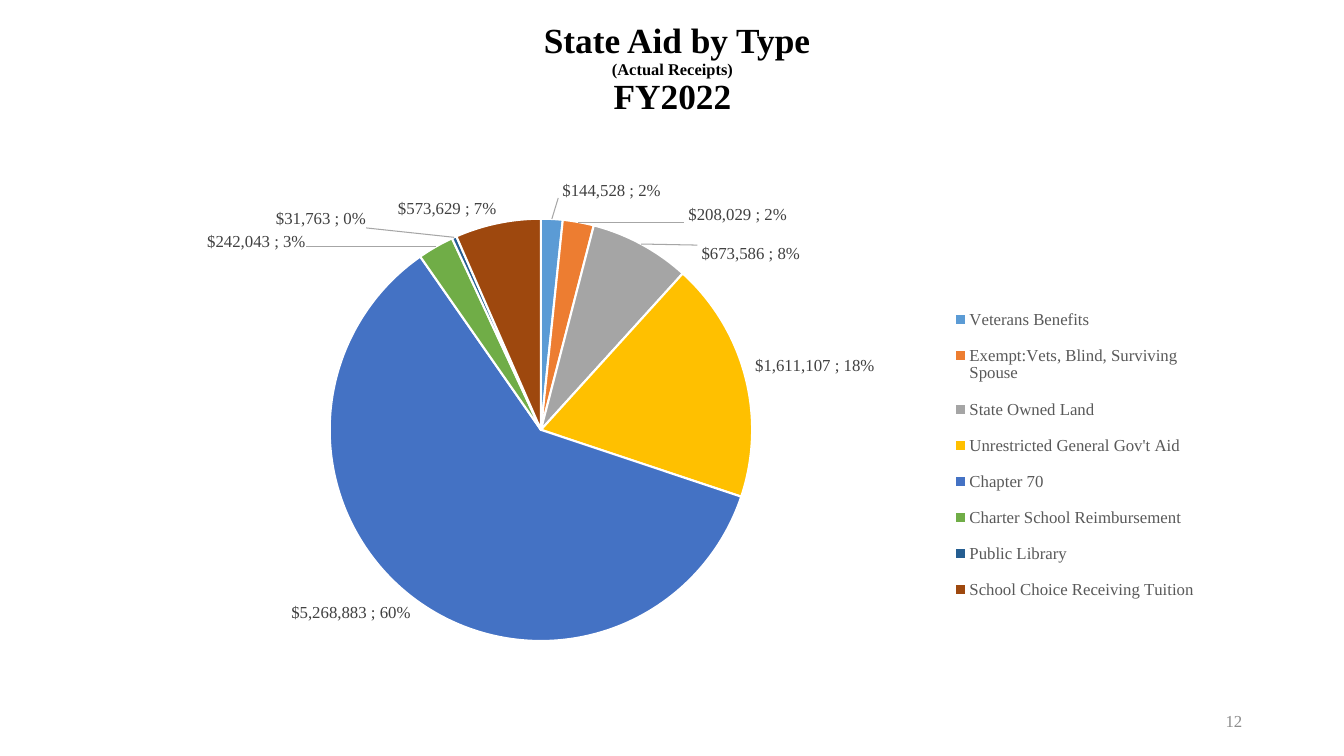
from copy import deepcopy

from lxml import etree
from pptx import Presentation
from pptx.chart.data import CategoryChartData
from pptx.dml.color import RGBColor
from pptx.enum.chart import XL_CHART_TYPE, XL_LABEL_POSITION, XL_LEGEND_POSITION
from pptx.enum.text import MSO_ANCHOR, PP_ALIGN
from pptx.oxml import parse_xml
from pptx.oxml.ns import nsdecls, qn
from pptx.util import Inches, Pt

PIE = XL_CHART_TYPE.PIE
LEGEND_RIGHT = XL_LEGEND_POSITION.RIGHT
OUTSIDE_END = XL_LABEL_POSITION.OUTSIDE_END
CENTER, RIGHT = PP_ALIGN.CENTER, PP_ALIGN.RIGHT
TOP, MIDDLE = MSO_ANCHOR.TOP, MSO_ANCHOR.MIDDLE

# Content
TITLE_LINES = [(" State Aid by Type", "title"), ("(Actual Receipts)", "subtitle"), ("FY2022", "title")]
PAGE_NUMBER = "12"
# Aid type, receipts, slice colour, label shift in inches (or None)
STATE_AID = [
    ("Veterans Benefits", 144528, "5B9BD5", (0.57, -0.15)),
    ("Exempt:Vets, Blind, Surviving Spouse", 208029, "ED7D31", (1.04, 0.07)),
    ("State Owned Land", 673586, "A5A5A5", (0.53, 0.24)),
    ("Unrestricted General Gov't Aid", 1611107, "FFC000", None),
    ("Chapter 70", 5268883, "4472C4", None),
    ("Charter School Reimbursement", 242043, "70AD47", (-1.26, 0.09)),
    ("Public Library", 31763, "255E91", (-0.85, -0.04)),
    ("School Choice Receiving Tuition", 573629, "9E480E", None),
]
DOLLARS = '_("$"* #,##0_);_("$"* \\(#,##0\\);_("$"* "-"??_);_(@_)'

# Theme and geometry
THEME = {
    "font": "Times New Roman",
    "colors": {"title": "000000", "label": "404040", "legend": "595959",
               "page": "8C8C8C", "edge": "FFFFFF", "leader": "A6A6A6"},
    "sizes": {"title": 25.2, "subtitle": 11.7, "body": 12},
}
COLORS, SIZES = THEME["colors"], THEME["sizes"]
TITLE_BOX = (0.74, 0.2, 11.86, 1.18)
TITLE_INSET = 0.03
CHART_BOX = (1.34, 1.8, 10.66, 4.73)
PAGE_BOX = (9.42, 6.95, 3, 0.4)
# Areas inside the chart, in inches from its corner
PIE_AREA = (1.93, 0.37, 4.19, 4.19)
LEGEND_AREA = (8.07, 1.1, 2.5, 3.22)


def format_font(font, size, color, bold=False):
    font.name = THEME["font"]
    font.size = Pt(size)
    font.bold = bold
    font.color.rgb = RGBColor.from_string(color)


def write_text(shape, lines, color, align, anchor, bold=False, spacing=1.0):
    """Fill one paragraph with (text, size name) lines."""
    frame = shape.text_frame
    frame.word_wrap = True
    frame.vertical_anchor = anchor
    paragraph = frame.paragraphs[0]
    paragraph.alignment = align
    paragraph.line_spacing = spacing
    for index, (text, size) in enumerate(lines):
        if index:
            paragraph.add_line_break()
        run = paragraph.add_run()
        run.text = text
        format_font(run.font, SIZES[size], color, bold)


def manual_layout(x, y, size=None, inner=False):
    """Build a chart layout from inches: an area, or a shift when no size is given."""
    chart_width, chart_height = CHART_BOX[2:]
    parts = [("layoutTarget", "inner")] if inner else []
    if size:
        parts += [("xMode", "edge"), ("yMode", "edge")]
    parts += [("x", x / chart_width), ("y", y / chart_height)]
    if size:
        parts += [("w", size[0] / chart_width), ("h", size[1] / chart_height)]
    body = "".join(f'<c:{tag} val="{value}"/>' for tag, value in parts)
    return parse_xml(f'<c:layout {nsdecls("c")}><c:manualLayout>{body}</c:manualLayout></c:layout>')


def place_area(element, area, inner=False):
    for layout in element.findall(qn("c:layout")):
        element.remove(layout)
    x, y, *size = area
    # The layout opens a plot area and follows the position of a legend
    element.insert(0 if inner else 1, manual_layout(x, y, size, inner))


def finish_labels(labels):
    """Add separators, shifted labels and leader lines."""
    # Without a label format, values use the data's format and shares stay percentages
    for tag in ("c:numFmt", "c:showLeaderLines"):
        for old in labels.findall(qn(tag)):
            labels.remove(old)
    etree.SubElement(labels, qn("c:separator")).text = "; "
    shared = list(labels)
    shifted = [(index, row[3]) for index, row in enumerate(STATE_AID) if row[3]]
    for place, (index, shift) in enumerate(shifted):
        label = parse_xml(f'<c:dLbl {nsdecls("c")}><c:idx val="{index}"/></c:dLbl>')
        label.append(manual_layout(*shift))
        label.extend([deepcopy(child) for child in shared])
        labels.insert(place, label)
    etree.SubElement(labels, qn("c:showLeaderLines")).set("val", "1")
    labels.append(parse_xml(
        f'<c:leaderLines {nsdecls("c", "a")}><c:spPr><a:ln w="9525"><a:solidFill>'
        f'<a:srgbClr val="{COLORS["leader"]}"/></a:solidFill></a:ln></c:spPr></c:leaderLines>'))


def add_aid_chart(slide):
    names, receipts, colors, _ = zip(*STATE_AID)
    data = CategoryChartData(number_format=DOLLARS)
    data.categories = names
    data.add_series("Series 1", receipts)
    chart = slide.shapes.add_chart(PIE, *map(Inches, CHART_BOX), data).chart
    chart.has_title = False
    chart.font.name = THEME["font"]
    chart.font.size = Pt(SIZES["body"])

    # Slices
    plot = chart.plots[0]
    plot.vary_by_categories = True
    series = plot.series[0]
    for index, color in enumerate(colors):
        point_format = series.points[index].format
        point_format.fill.solid()
        point_format.fill.fore_color.rgb = RGBColor.from_string(color)
        point_format.line.color.rgb = RGBColor.from_string(COLORS["edge"])
        point_format.line.width = Pt(1.5)

    # Labels
    labels = series.data_labels
    labels.show_value = labels.show_percentage = True
    labels.position = OUTSIDE_END
    format_font(labels.font, SIZES["body"], COLORS["label"])
    finish_labels(chart.element.find(".//" + qn("c:ser") + "/" + qn("c:dLbls")))

    # Legend and plot placement
    chart.has_legend = True
    chart.legend.position = LEGEND_RIGHT
    chart.legend.include_in_layout = False
    format_font(chart.legend.font, SIZES["body"], COLORS["legend"])
    place_area(chart.element.find(".//" + qn("c:legend")), LEGEND_AREA)
    place_area(chart.element.find(".//" + qn("c:plotArea")), PIE_AREA, inner=True)


def main():
    presentation = Presentation()
    presentation.slide_width, presentation.slide_height = Inches(13.33), Inches(7.5)
    slide = presentation.slides.add_slide(presentation.slide_layouts[5])

    # Title
    title = slide.shapes.title
    title.left, title.top, title.width, title.height = map(Inches, TITLE_BOX)
    title.text_frame.margin_top = Inches(TITLE_INSET)
    write_text(title, TITLE_LINES, COLORS["title"], CENTER, TOP, bold=True, spacing=0.9)

    # Chart
    add_aid_chart(slide)

    # Page number
    page = slide.shapes.add_textbox(*map(Inches, PAGE_BOX))
    write_text(page, [(PAGE_NUMBER, "body")], COLORS["page"], RIGHT, MIDDLE)

    presentation.save("out.pptx")


if __name__ == "__main__":
    main()
